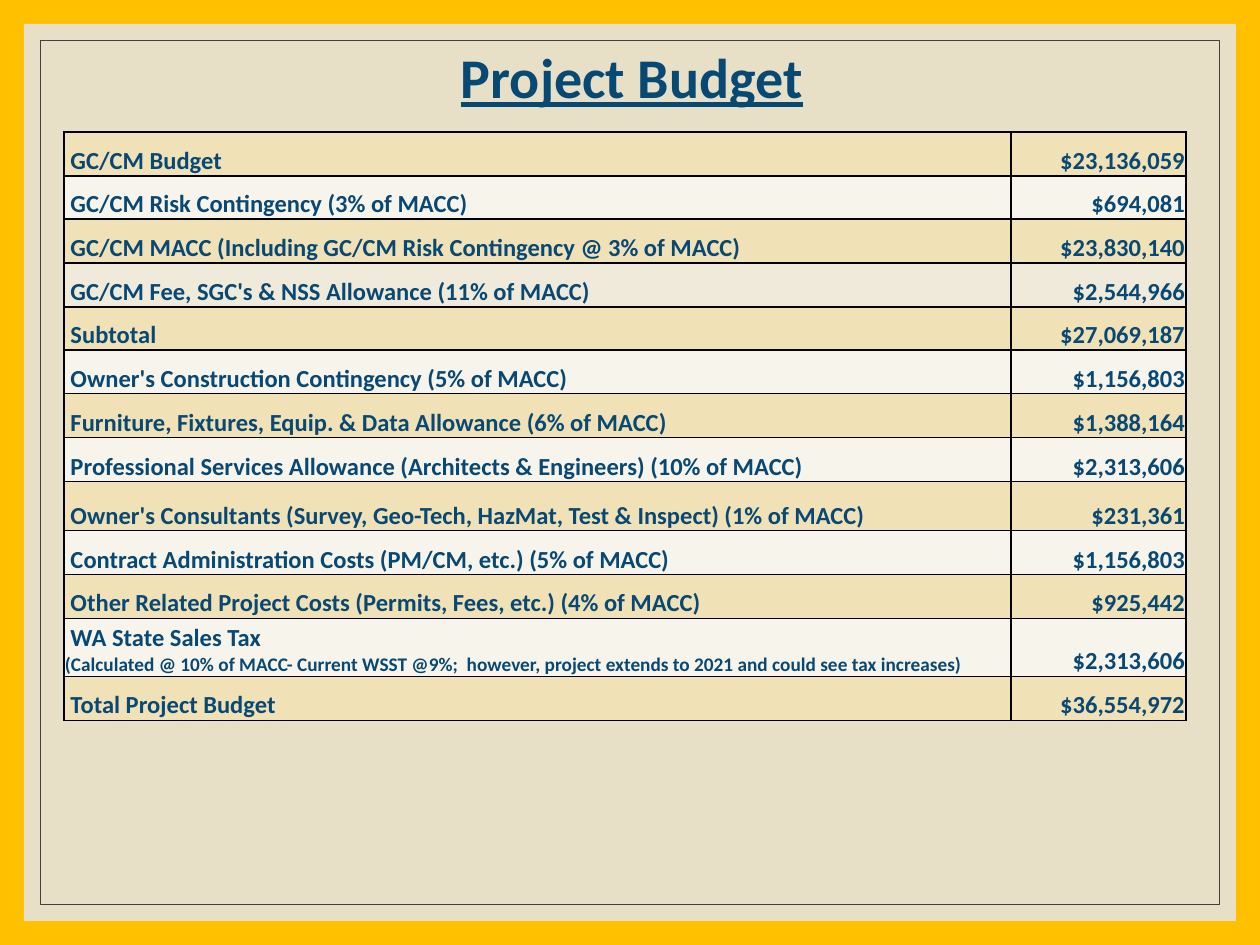
from itertools import pairwise

from lxml import etree
from pptx import Presentation
from pptx import util as u
from pptx.dml.color import RGBColor
from pptx.enum import shapes, text
from pptx.oxml import ns

GOLD, SAND, WHEAT, WHITE = "FFC000", "E7E0C7", "F6E2AE", "FFFFFF"
TITLE_BLUE, TEXT_BLUE, GREY, BLACK = "064974", "074875", "404040", "000000"
COLUMN_WIDTHS = [947, 175]
ROW_EDGES = [132, 176, 219, 263, 307, 350, 394, 438, 482, 531, 575, 619, 677, 721]
PALE_ROW = 3
BUDGET = [
    (" GC/CM Budget", "$23,136,059"),
    (" GC/CM Risk Contingency (3% of MACC)", "$694,081"),
    (" GC/CM MACC (Including GC/CM Risk Contingency @ 3% of MACC)", "$23,830,140"),
    (" GC/CM Fee, SGC's & NSS Allowance (11% of MACC)", "$2,544,966"),
    (" Subtotal", "$27,069,187"),
    (" Owner's Construction Contingency (5% of MACC)", "$1,156,803"),
    (" Furniture, Fixtures, Equip. & Data Allowance (6% of MACC)", "$1,388,164"),
    (" Professional Services Allowance (Architects & Engineers) (10% of MACC)", "$2,313,606"),
    (" Owner's Consultants (Survey, Geo-Tech, HazMat, Test & Inspect) (1% of MACC)", "$231,361"),
    (" Contract Administration Costs (PM/CM, etc.) (5% of MACC)", "$1,156,803"),
    (" Other Related Project Costs (Permits, Fees, etc.) (4% of MACC)", "$925,442"),
    (" WA State Sales Tax\n(Calculated @ 10% of MACC- Current WSST @9%;  however, "
     "project extends to 2021 and could see tax increases)", "$2,313,606"),
    (" Total Project Budget", "$36,554,972"),
]


def px(length):
    """Turn pixels into EMU."""
    return u.Emu(round(length * 914400 / 126))


def paint(target, color):
    """Give a fill, or a font or line colour, a solid hex colour."""
    if hasattr(target, "solid"):
        target.solid()
        target = target.fore_color
    else:
        target = target.color
    target.rgb = RGBColor.from_string(color)


def style(para, size, color, align, underline=None):
    """Format a paragraph and its runs in bold Calibri."""
    para.alignment = align
    for span in para.runs:
        span.font.name = "Calibri"
        span.font.size = u.Pt(size)
        span.font.bold = True
        span.font.underline = underline
        paint(span.font, color)


def add_frame(page, box, inset):
    """Place the sand panel and its thin inner outline behind the title."""
    left, top, width, height = box
    inner = (left + inset, top + inset, width - 2 * inset, height - 2 * inset)
    panel, outline = [
        page.shapes.add_shape(shapes.MSO_SHAPE.RECTANGLE, *map(px, bounds))
        for bounds in (box, inner)
    ]
    paint(panel.fill, SAND)
    panel.line.fill.background()
    outline.fill.background()
    paint(outline.line, GREY)
    outline.line.width = u.Pt(0.5)
    for shape in (panel, outline):
        shape.shadow.inherit = False
        page.shapes.title.element.addprevious(shape.element)


def add_title(page, box):
    """Move and format the title placeholder."""
    title = page.shapes.title
    title.left, title.top, title.width, title.height = map(px, box)
    title.text_frame.text = "Project Budget"
    title.text_frame.vertical_anchor = text.MSO_ANCHOR.MIDDLE
    para = title.text_frame.paragraphs[0]
    para.line_spacing = 0.9
    style(para, 32, TITLE_BLUE, text.PP_ALIGN.CENTER, True)


def add_borders(cell):
    """Draw one-point black borders on all sides of a cell."""
    properties = cell._tc.get_or_add_tcPr()
    for index, side in enumerate("LRTB"):
        line = etree.Element(ns.qn(f"a:ln{side}"), w=str(u.Pt(1)))
        fill = etree.SubElement(line, ns.qn("a:solidFill"))
        etree.SubElement(fill, ns.qn("a:srgbClr"), val=BLACK)
        properties.insert(index, line)


def fill_cell(cell, wording, color, opacity, align):
    """Write a cell's text and set its fill, margins and borders."""
    cell.text_frame.text = wording
    cell.vertical_anchor = text.MSO_ANCHOR.BOTTOM
    cell.margin_left = cell.margin_right = cell.margin_top = px(1)
    cell.margin_bottom = 0
    for index, para in enumerate(cell.text_frame.paragraphs):
        style(para, 11 if index else 14, TEXT_BLUE, align)
    paint(cell.fill, color)
    shade = cell._tc.tcPr.find(".//" + ns.qn("a:srgbClr"))
    etree.SubElement(shade, ns.qn("a:alpha"), val=str(opacity * 1000))
    add_borders(cell)


def add_budget(page, box):
    """Build the budget table with alternating row fills."""
    table = page.shapes.add_table(len(BUDGET), 2, *map(px, box)).table
    table.first_row = table.horz_banding = False
    for column, width in zip(table.columns, COLUMN_WIDTHS):
        column.width = px(width)
    for row, (upper, lower) in zip(table.rows, pairwise(ROW_EDGES)):
        row.height = px(lower - upper)
    aligns = (text.PP_ALIGN.LEFT, text.PP_ALIGN.RIGHT)
    for index, entry in enumerate(BUDGET):
        color = WHITE if index % 2 else WHEAT
        opacity = 34 if index == PALE_ROW else 67
        for cell, wording, align in zip(table.rows[index].cells, entry, aligns):
            fill_cell(cell, wording, color, opacity, align)


def main():
    """Build and save the slide."""
    deck = Presentation()
    deck.slide_width, deck.slide_height = px(1260), px(945)
    page = deck.slides.add_slide(deck.slide_layouts[5])
    paint(page.background.fill, GOLD)
    add_frame(page, (24, 24, 1212, 897), 16)
    add_title(page, (131, -11, 1002, 183))
    add_budget(page, (64, ROW_EDGES[0], sum(COLUMN_WIDTHS), ROW_EDGES[-1] - ROW_EDGES[0]))
    deck.save("out.pptx")


if __name__ == "__main__":
    main()
